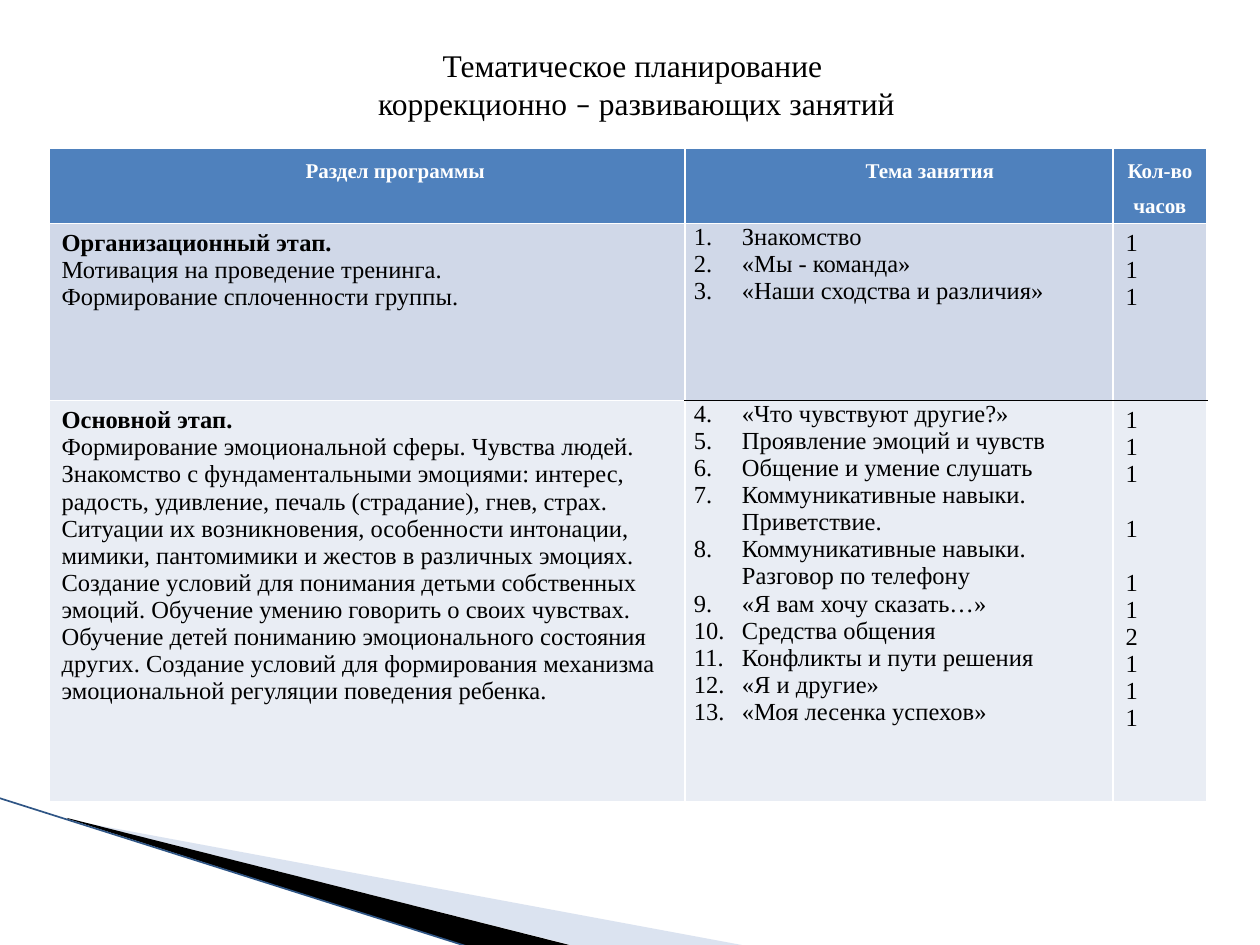
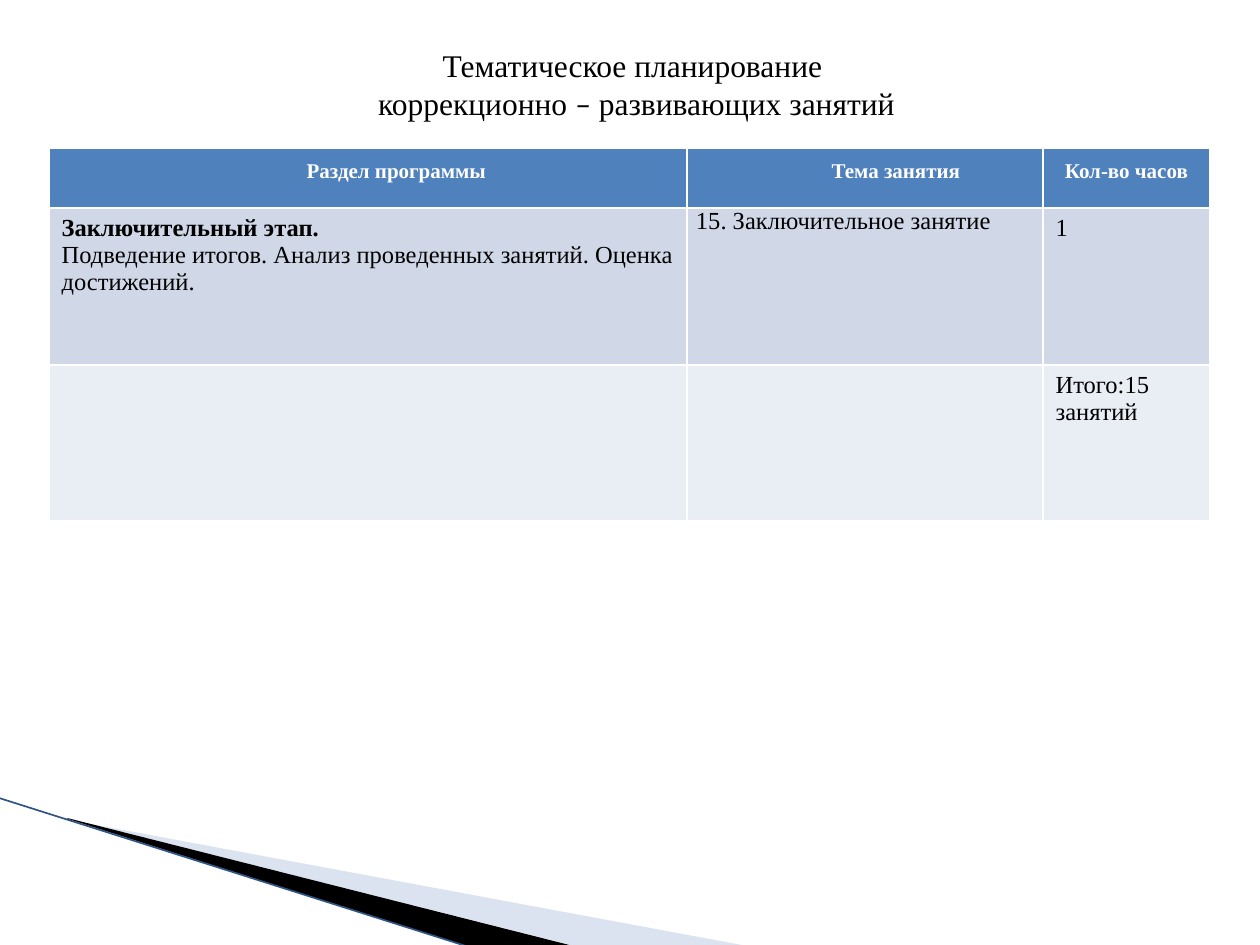
from lxml import etree
from pptx import Presentation
from pptx import util as u
from pptx.dml.color import RGBColor
from pptx.enum import shapes, text
from pptx.oxml import ns

PX = 914400 / 126
FONT = "Times New Roman"
INK, WHITE, HEADER = "000000", "FFFFFF", "4F81BD"
BANDS = ["D0D8E8", "E9EDF4"]
LIGHT_WEDGE, EDGE = "A7B9DB", "2F5585"
INDENT = 62
LINE = 15.5

TITLE = [["Тематическое планирование "], ["коррекционно ", "–", " развивающих занятий"]]
HEADINGS = ["Раздел программы ", "Тема занятия", "Кол-во часов"]

# Each row: stage (name, descriptions), (first number, topics), hours (text, lines skipped above)
PLANS = [
    {
        "columns": [636, 428, 94],
        "heights": [71, 177, 401],
        "ruled": True,
        "rows": [
            (
                ("Организационный этап.", ["Мотивация на проведение тренинга.",
                                           "Формирование сплоченности группы."]),
                (1, ["Знакомство", "«Мы - команда»", "«Наши сходства и различия»"]),
                [("1", 0), ("1", 0), ("1", 0)],
            ),
            (
                ("Основной этап.", [
                    "Формирование эмоциональной сферы. Чувства людей. Знакомство с "
                    "фундаментальными эмоциями: интерес, радость, удивление, печаль "
                    "(страдание), гнев, страх. Ситуации их возникновения, особенности "
                    "интонации, мимики, пантомимики и жестов в различных эмоциях. Создание "
                    "условий для понимания детьми собственных эмоций. Обучение умению "
                    "говорить о своих чувствах. Обучение детей пониманию эмоционального "
                    "состояния других. Создание условий для формирования механизма "
                    "эмоциональной регуляции поведения ребенка."]),
                (4, ["«Что чувствуют другие?»", "Проявление эмоций и чувств",
                     "Общение и умение слушать", "Коммуникативные навыки. Приветствие.",
                     "Коммуникативные навыки. Разговор по телефону",
                     "«Я вам хочу сказать…»", "Средства общения",
                     "Конфликты и пути решения", "«Я и другие»", "«Моя лесенка успехов»"]),
                [("1", 0), ("1", 0), ("1", 0), ("1", 1), ("1", 1),
                 ("1", 0), ("2", 0), ("1", 0), ("1", 0), ("1", 0)],
            ),
        ],
    },
    {
        "columns": [638, 356, 167],
        "heights": [60, 157, 156],
        "ruled": False,
        "rows": [
            (
                ("Заключительный этап.", ["Подведение итогов. Анализ проведенных занятий. "
                                          "Оценка достижений."]),
                (None, ["15. Заключительное занятие"]),
                [("1", 0)],
            ),
            (None, (None, []), [("Итого:15 занятий", 0)]),
        ],
    },
]


def px(length):
    return u.Emu(round(length * PX))


def color(code):
    return RGBColor.from_string(code)


def add_xml(parent, tag, **attributes):
    return etree.SubElement(parent, ns.qn(tag), **attributes)


def set_indent(para, margin, first):
    properties = para._p.get_or_add_pPr()
    properties.set("marL", str(px(margin)))
    properties.set("indent", str(px(first)))
    return properties


def style(para, size, code=INK, bold=False):
    para.font.name = FONT
    para.font.size = u.Pt(size)
    para.font.bold = bold
    para.font.color.rgb = color(code)


def paragraphs(frame, lines):
    """Yield one paragraph for each line, using the first existing one."""
    for number, line in enumerate(lines):
        para = frame.add_paragraph() if number else frame.paragraphs[0]
        para.text = line
        yield para


def reframe(shape, points, frame):
    """Give the shape its own frame while its outline stays in place."""
    left, top, width, height = frame
    shape.left, shape.top, shape.width, shape.height = map(px, frame)
    outline = next(shape._element.iter(ns.qn("a:path")))
    outline.set("w", str(width))
    outline.set("h", str(height))
    for corner, (x, y) in zip(outline.iter(ns.qn("a:pt")), points):
        corner.set("x", str(x - left))
        corner.set("y", str(y - top))


def add_wedge(page, points, frame, fill):
    builder = page.shapes.build_freeform(*points[0], scale=PX)
    builder.add_line_segments(points[1:], close=True)
    wedge = builder.convert_to_shape()
    reframe(wedge, points, frame)
    wedge.shadow.inherit = False
    wedge.fill.solid()
    wedge.fill.fore_color.rgb = color(fill)
    wedge.line.fill.background()
    return wedge


def add_corner(page):
    light = add_wedge(page, [(69, 820), (747, 946), (575, 946), (69, 819)],
                      (98, 689, 524, 199), LIGHT_WEDGE)
    tint = light._element.spPr.find(ns.qn("a:solidFill"))[0]
    add_xml(tint, "a:alpha", val="40000")
    add_wedge(page, [(67, 818), (573, 946), (469, 947), (68, 819)],
              (-8, 798, 524, 116), INK)
    edge = page.shapes.add_connector(
        shapes.MSO_CONNECTOR.STRAIGHT, px(-1), px(798), px(469), px(947))
    edge.line.color.rgb = color(EDGE)
    edge.line.width = u.Pt(0.95)
    add_xml(edge._element.spPr, "a:effectLst")


def set_title(page):
    title = page.shapes.title
    title.left, title.top, title.width, title.height = map(px, (246, 39, 719, 90))
    frame = title.text_frame
    frame.word_wrap = True
    frame.auto_size = text.MSO_AUTO_SIZE.SHAPE_TO_FIT_TEXT
    frame.vertical_anchor = text.MSO_ANCHOR.MIDDLE
    for para, pieces in zip(paragraphs(frame, [""] * len(TITLE)), TITLE):
        para.alignment = text.PP_ALIGN.CENTER
        set_indent(para, 0, INDENT)
        style(para, 18)
        for piece in pieces:
            span = para.add_run()
            span.text = piece
            if piece == "–":
                span.font.name = "Calibri"


def fill_cell(cell, fill):
    cell.fill.solid()
    cell.fill.fore_color.rgb = color(fill)


def add_rule(cell, side):
    border = add_xml(cell._tc.get_or_add_tcPr(), side, w=str(u.Pt(1)))
    add_xml(add_xml(border, "a:solidFill"), "a:srgbClr", val=INK)


def tighten(cell):
    cell.margin_left = cell.margin_right = px(9)
    cell.margin_top = cell.margin_bottom = 0


def fill_header(table):
    for column, heading in enumerate(HEADINGS):
        cell = table.cell(0, column)
        fill_cell(cell, HEADER)
        tighten(cell)
        for para in paragraphs(cell.text_frame, [heading]):
            para.alignment = text.PP_ALIGN.CENTER
            para.line_spacing = 1.5
            if column < 2:
                set_indent(para, 0, INDENT)
            style(para, 12, WHITE, bold=True)


def fill_row(cells, stage, topics, hours):
    stage_cell, topic_cell, hour_cell = cells
    if stage:
        name, descriptions = stage
        for number, para in enumerate(paragraphs(stage_cell.text_frame, [name, *descriptions])):
            style(para, 14, bold=number == 0)

    tighten(topic_cell)
    start, names = topics
    for para in paragraphs(topic_cell.text_frame, names):
        if start:
            properties = set_indent(para, 48, -48)
            add_xml(properties, "a:buAutoNum", type="arabicPeriod", startAt=str(start))
        style(para, 14)

    lines = paragraphs(hour_cell.text_frame, [hour for hour, _ in hours])
    for para, (_, skipped) in zip(lines, hours):
        if skipped:
            para.space_before = u.Pt(LINE * skipped)
        style(para, 14)


def add_plan(page, plan):
    columns, heights = plan["columns"], plan["heights"]
    frame = page.shapes.add_table(len(heights), len(columns), px(49), px(148),
                                  px(sum(columns)), px(sum(heights)))
    table = frame.table
    table.horz_banding = False
    for column, width in zip(table.columns, columns):
        column.width = px(width)
    for row, height in zip(table.rows, heights):
        row.height = px(height)
    fill_header(table)
    for number, content in enumerate(plan["rows"]):
        cells = list(table.rows[number + 1].cells)
        for column, cell in enumerate(cells):
            if plan["ruled"] and column:
                add_rule(cell, "a:lnT" if number else "a:lnB")
            fill_cell(cell, BANDS[number])
        fill_row(cells, *content)


def main():
    deck = Presentation()
    deck.slide_width, deck.slide_height = px(1260), px(945)
    for plan in PLANS:
        page = deck.slides.add_slide(deck.slide_layouts[5])
        add_corner(page)
        add_plan(page, plan)
        set_title(page)
    deck.save("out.pptx")


if __name__ == "__main__":
    main()
